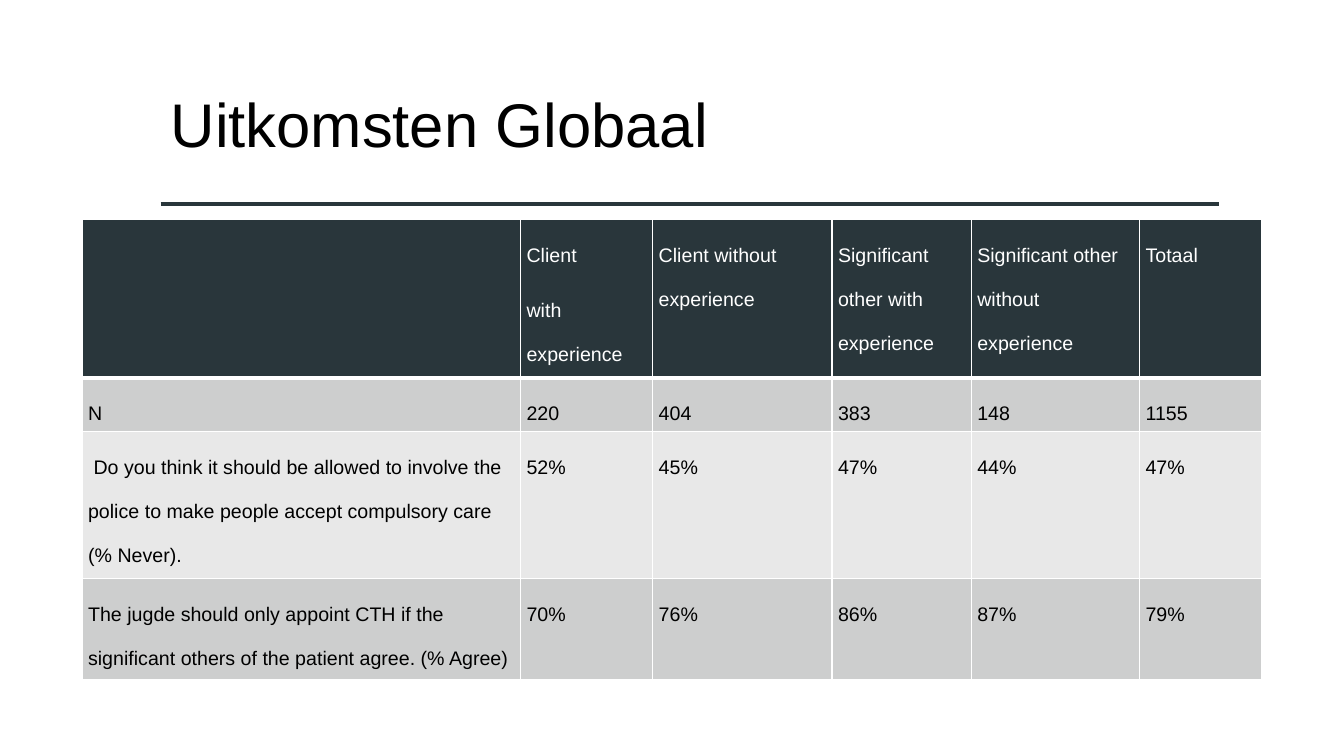
from lxml import etree
from pptx import Presentation
from pptx.dml.color import RGBColor
from pptx.enum.shapes import MSO_CONNECTOR as Connector
from pptx.enum.text import MSO_ANCHOR as Anchor
from pptx.oxml.ns import qn
from pptx.util import Cm, Pt

DARK = RGBColor(0x29, 0x36, 0x3B)
BAND_DARK = RGBColor(0xCD, 0xCE, 0xCE)
BAND_LIGHT = RGBColor(0xE8, 0xE8, 0xE8)
WHITE = RGBColor(0xFF, 0xFF, 0xFF)
BLACK = RGBColor(0, 0, 0)
FONT = "Arial"

COLUMN_WIDTHS = [11.05, 3.33, 4.52, 3.51, 4.24, 3.07]
ROW_HEIGHTS = [3.73, 1.24, 3.48, 2.36]
ROWS = [
    ["", "Client\nwith experience", "Client without experience",
     "Significant other with experience", "Significant other without experience", "Totaal"],
    ["N", "220", "404", "383", "148", "1155"],
    [" Do you think it should be allowed to involve the police to make people "
     "accept compulsory care (% Never).", "52%", "45%", "47%", "44%", "47%"],
    ["The jugde should only appoint CTH if the significant others of the patient "
     "agree. (% Agree)", "70%", "76%", "86%", "87%", "79%"],
]


def style_text(para, size, color, line_spacing):
    para.line_spacing = line_spacing
    for span in para.runs:
        span.font.name = FONT
        span.font.size = Pt(size)
        span.font.bold = False
        span.font.color.rgb = color


def add_border(cell, side, points):
    properties = cell._tc.get_or_add_tcPr()
    line = etree.SubElement(properties, qn(f"a:ln{side}"), w=str(Pt(points)))
    fill = etree.SubElement(line, qn("a:solidFill"))
    etree.SubElement(fill, qn("a:srgbClr"), val=str(WHITE))


deck = Presentation()
deck.slide_width, deck.slide_height = Cm(33.87), Cm(19.05)
page = deck.slides.add_slide(deck.slide_layouts[6])

# Rule below the title
rule = page.shapes.add_connector(Connector.STRAIGHT, Cm(4.05), Cm(5.14), Cm(30.73), Cm(5.14))
rule.line.color.rgb = DARK
rule.line.width = Pt(2.5)
etree.SubElement(rule._element.spPr, qn("a:effectLst"))

# Title
title = page.shapes.add_textbox(Cm(4.05), Cm(2.24), Cm(26.67), Cm(2.92))
title.text_frame.word_wrap = True
title.text_frame.vertical_anchor = Anchor.TOP
title.text_frame.text = "Uitkomsten Globaal"
style_text(title.text_frame.paragraphs[0], 44, BLACK, 0.9)

# Table of outcomes
frame = page.shapes.add_table(len(ROWS), len(COLUMN_WIDTHS), Cm(2.07), Cm(5.52),
                              Cm(sum(COLUMN_WIDTHS)), Cm(sum(ROW_HEIGHTS)))
table = frame.table
table.first_row = table.horz_banding = False
for column, width in zip(table.columns, COLUMN_WIDTHS):
    column.width = Cm(width)

for row_index, texts in enumerate(ROWS):
    table.rows[row_index].height = Cm(ROW_HEIGHTS[row_index])
    is_header = row_index == 0
    band = BAND_DARK if row_index % 2 else BAND_LIGHT
    for column_index, text in enumerate(texts):
        cell = table.cell(row_index, column_index)
        for side in "LRTB":
            add_border(cell, side, 3 if is_header and side == "B" else 1)
        cell.fill.solid()
        cell.fill.fore_color.rgb = DARK if is_header else band
        cell.margin_left = cell.margin_right = Cm(0.15)
        cell.margin_top = cell.margin_bottom = Cm(0.08)
        cell.text_frame.text = text
        for para in cell.text_frame.paragraphs:
            para.space_after = Pt(8)
            style_text(para, 14, WHITE if is_header else BLACK, 2.0)

deck.save("out.pptx")
